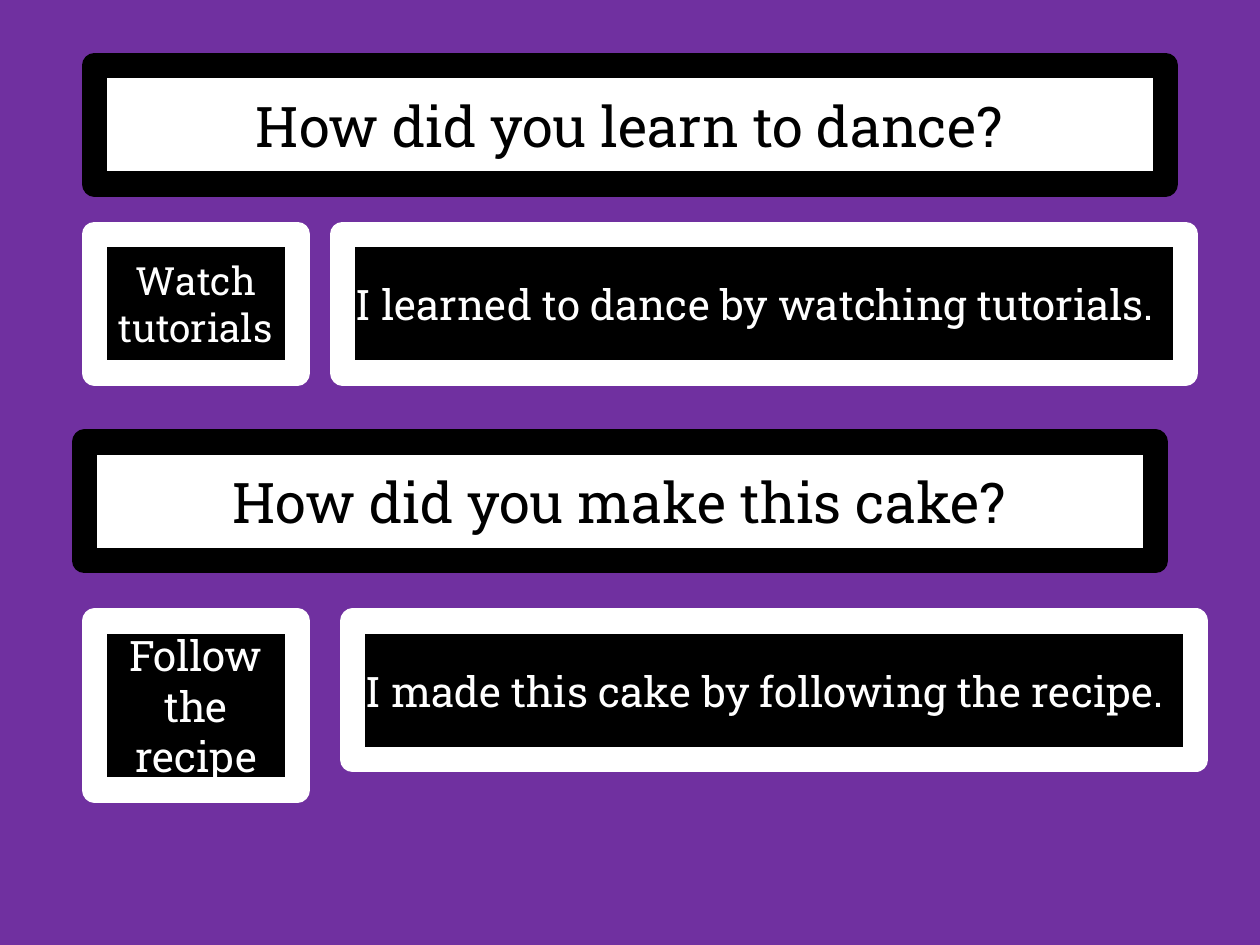
from pptx import Presentation
from pptx.dml.color import RGBColor
from pptx.enum.shapes import MSO_SHAPE
from pptx.enum.text import MSO_ANCHOR, PP_ALIGN
from pptx.util import Inches, Pt

PURPLE = RGBColor(0x70, 0x30, 0xA0)
BLACK = RGBColor(0x00, 0x00, 0x00)
WHITE = RGBColor(0xFF, 0xFF, 0xFF)

FONT = "Roboto Slab"
BORDER = Pt(14.5)
CUE_LEFT, CUE_WIDTH = 0.75, 1.61
QUESTION_WIDTH, QUESTION_HEIGHT = 8.5, 0.94
ANSWER_WIDTH, ANSWER_HEIGHT = 6.69, 1.1

# Each exercise: question, cue and answer with their places
EXERCISES = [
    {
        "question": ("How did you learn to dance?", 0.75, 0.52),
        "cue": ("Watch tutorials", 1.1, 22.2),
        "answer": ("I learned to dance by watching tutorials.", 2.72),
        "reply_top": 1.86,
    },
    {
        "question": ("How did you make this cake?", 0.67, 3.51),
        "cue": ("Follow the recipe", 1.34, 24),
        "answer": ("I made this cake by following the recipe.", 2.8),
        "reply_top": 4.93,
    },
]


def add_card(slide, text, box, size, fill, ink, align=PP_ALIGN.CENTER):
    """Add a filled card whose border has the colour of its text."""
    card = slide.shapes.add_shape(
        MSO_SHAPE.RECTANGLE, *(Inches(length) for length in box))
    card.shadow.inherit = False
    card.fill.solid()
    card.fill.fore_color.rgb = fill
    card.line.color.rgb = ink
    card.line.width = BORDER

    frame = card.text_frame
    frame.word_wrap = True
    frame.vertical_anchor = MSO_ANCHOR.MIDDLE
    paragraph = frame.paragraphs[0]
    paragraph.alignment = align
    run = paragraph.add_run()
    run.text = text
    run.font.color.rgb = ink
    for name, value in {"name": FONT, "size": Pt(size)}.items():
        setattr(run.font, name, value)


def add_question(slide, text, left, top):
    box = (left, top, QUESTION_WIDTH, QUESTION_HEIGHT)
    add_card(slide, text, box, 32, WHITE, BLACK)


def add_cue(slide, text, top, height, size):
    box = (CUE_LEFT, top, CUE_WIDTH, height)
    add_card(slide, text, box, size, BLACK, WHITE)


def add_answer(slide, text, left, top):
    box = (left, top, ANSWER_WIDTH, ANSWER_HEIGHT)
    add_card(slide, text, box, 24, BLACK, WHITE, PP_ALIGN.LEFT)


def main():
    deck = Presentation()
    deck.slide_width, deck.slide_height = Inches(10), Inches(7.5)
    slide = deck.slides.add_slide(deck.slide_layouts[6])

    # Background
    slide.background.fill.solid()
    slide.background.fill.fore_color.rgb = PURPLE

    # Question above, cue and answer side by side below
    for exercise in EXERCISES:
        reply_top = exercise["reply_top"]
        add_question(slide, *exercise["question"])
        cue, cue_height, cue_size = exercise["cue"]
        add_cue(slide, cue, reply_top, cue_height, cue_size)
        add_answer(slide, *exercise["answer"], reply_top)

    deck.save("out.pptx")


if __name__ == "__main__":
    main()
